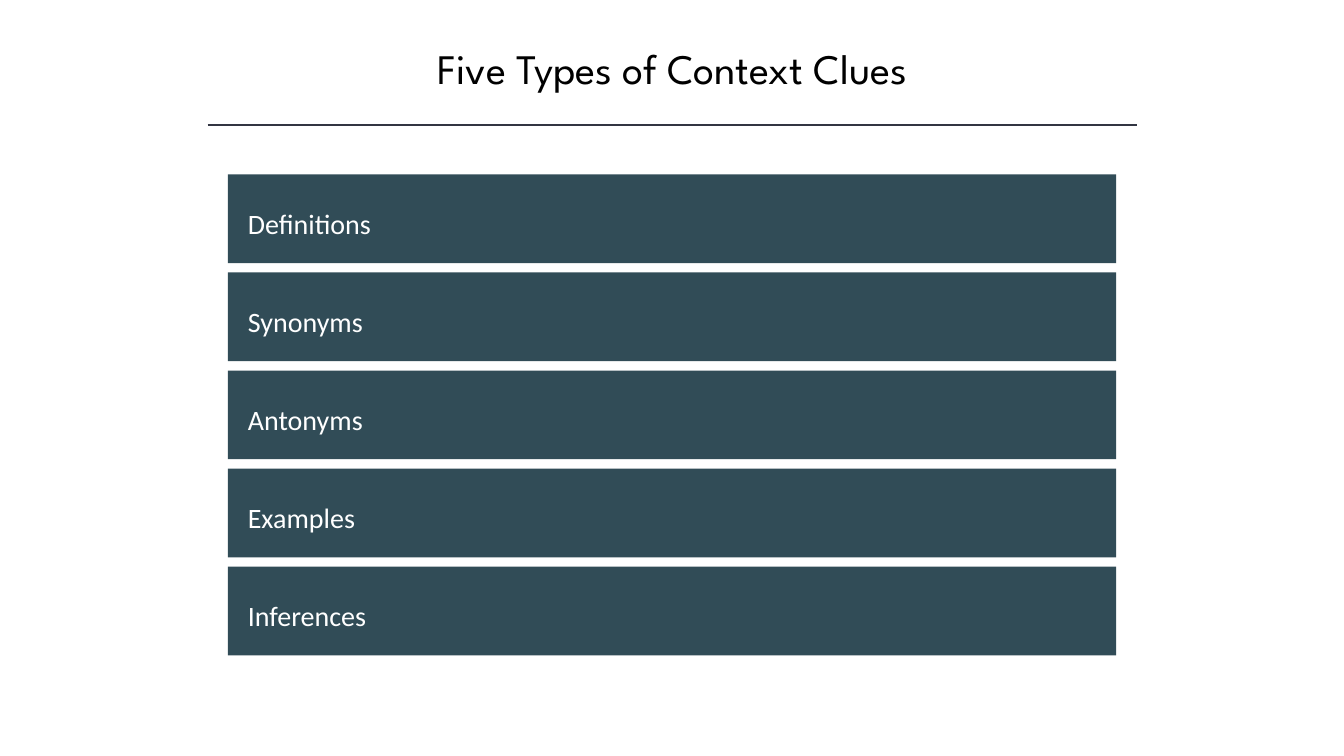
"""Build the slide that lists five types of context clues."""
import pptx
import pptx.util
import pptx.dml.color
import pptx.enum.shapes
import pptx.enum.text
import lxml.etree

TITLE = "Five Types of Context Clues"
CLUES = ["Definitions", "Synonyms", "Antonyms", "Examples", "Inferences"]
COLORS = {"title": "000000", "rule": "323542", "bar": "314C57", "label": "FFFFFF"}

Inches = pptx.util.Inches
RECT = pptx.enum.shapes.MSO_SHAPE.RECTANGLE
ALIGN = pptx.enum.text.PP_ALIGN
BAR_LEFT, BAR_TOP, BAR_W, BAR_H, BAR_STEP = 2.26, 1.73, 8.81, 0.88, 0.973
LABEL_DX, LABEL_DY, LABEL_W, LABEL_H = 0.1, 0.27, 8.54, 0.44


def rgb(name):
    return pptx.dml.color.RGBColor.from_string(COLORS[name])


def write(sp, text, *, font, size, color, align):
    tf = sp.text_frame
    tf.word_wrap = True
    tf.auto_size = pptx.enum.text.MSO_AUTO_SIZE.SHAPE_TO_FIT_TEXT
    tf.vertical_anchor = pptx.enum.text.MSO_ANCHOR.TOP
    p = tf.paragraphs[0]
    p.alignment = align
    r = p.add_run()
    r.text = text
    r.font.name = font
    r.font.size = pptx.util.Pt(size)
    r.font.color.rgb = rgb(color)


def add_rect(shapes, left, top, width, height):
    sp = shapes.add_shape(RECT, Inches(left), Inches(top), Inches(width), Inches(height))
    sp.shadow.inherit = False
    sp.fill.solid()
    sp.fill.fore_color.rgb = rgb("bar")
    sp.line.fill.background()
    return sp


def add_rule(s, left, right, y):
    line = s.shapes.add_connector(
        pptx.enum.shapes.MSO_CONNECTOR.STRAIGHT,
        Inches(left), Inches(y), Inches(right), Inches(y))
    line.line.color.rgb = rgb("rule")
    line.line.width = pptx.util.Pt(1)
    lxml.etree.SubElement(line._element.spPr, pptx.oxml.ns.qn("a:effectLst"))


def main():
    prs = pptx.Presentation()
    prs.slide_width, prs.slide_height = Inches(13.33), Inches(7.5)
    s = prs.slides.add_slide(prs.slide_layouts[6])

    title = s.shapes.add_textbox(Inches(1.67), Inches(0.37), Inches(10), Inches(0.61))
    write(title, TITLE, font="League Spartan", size=30, color="title", align=ALIGN.CENTER)
    add_rule(s, 2.06, 11.28, 1.24)

    for i, clue in enumerate(CLUES):
        top = BAR_TOP + i * BAR_STEP
        group = s.shapes.add_group_shape()
        add_rect(group.shapes, BAR_LEFT, top, BAR_W, BAR_H)
        label = add_rect(group.shapes, BAR_LEFT + LABEL_DX, top + LABEL_DY, LABEL_W, LABEL_H)
        write(label, clue, font="Calibri", size=20, color="label", align=ALIGN.LEFT)

    prs.save("out.pptx")


if __name__ == "__main__":
    main()
